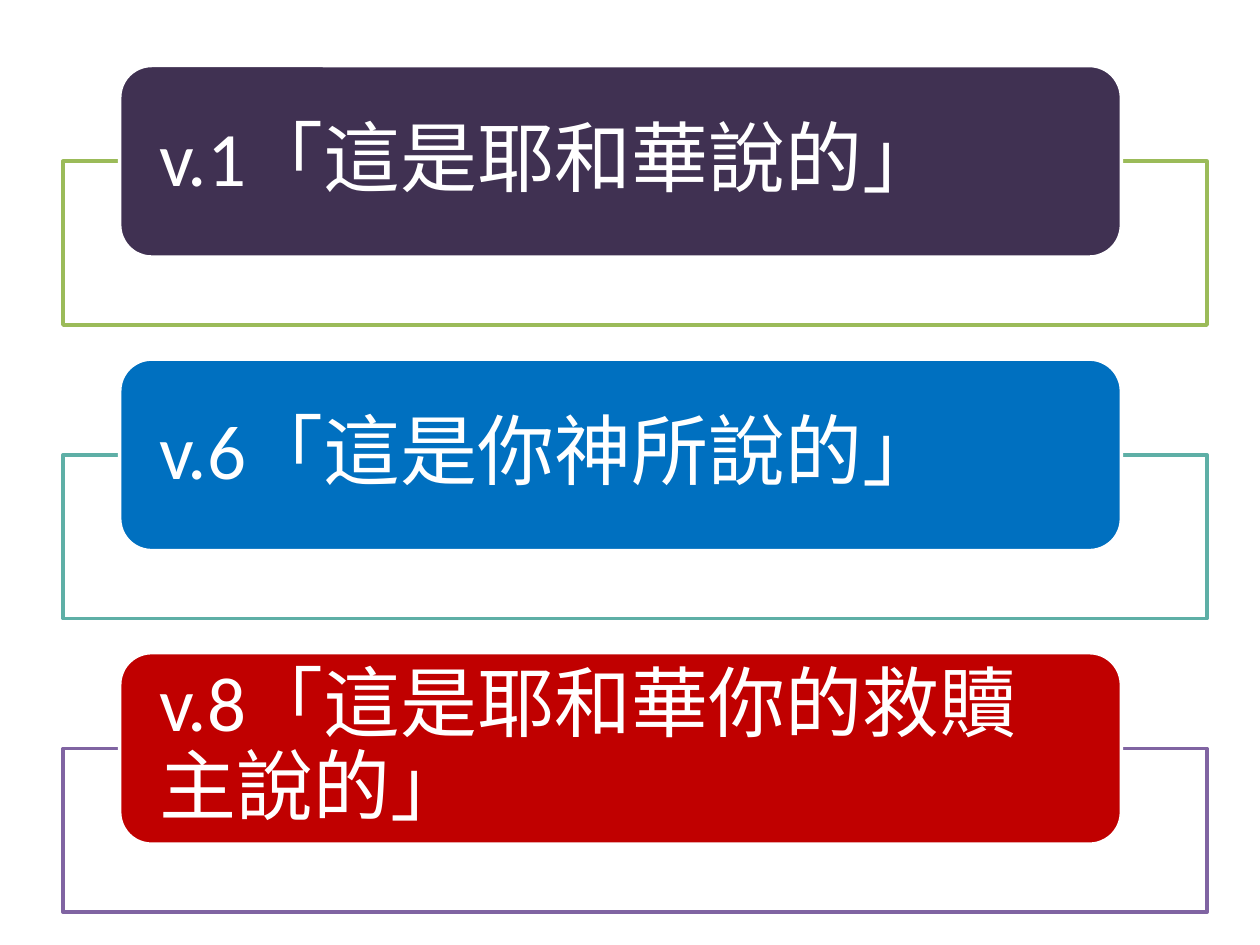
from pptx import Presentation
from pptx.dml.color import RGBColor
from pptx.enum.shapes import MSO_SHAPE
from pptx.enum.text import MSO_ANCHOR, PP_ALIGN
from pptx.util import Inches, Pt

RECTANGLE, ROUNDED = MSO_SHAPE.RECTANGLE, MSO_SHAPE.ROUNDED_RECTANGLE
MIDDLE, LEFT = MSO_ANCHOR.MIDDLE, PP_ALIGN.LEFT

# Content: verse text, label fill, frame line
VERSES = [
    ("v.1「這是耶和華說的」", "403152", "9BBB59"),
    ("v.6「這是你神所說的」", "0070C0", "5EAFA6"),
    ("v.8「這是耶和華你的救贖主說的」", "C00000", "8064A2"),
]
WHITE = "FFFFFF"

# Layout in inches
FIRST_TOP, STEP = 0.52, 2.33
FRAME_LEFT, FRAME_DROP, FRAME_SIZE = 0.5, 0.76, (9.08, 1.3)
LABEL_LEFT, LABEL_SIZE = 0.95, (7.95, 1.52)

FRAME_FORMAT = {
    "word_wrap": True, "vertical_anchor": MIDDLE,
    "margin_left": Inches(0.24), "margin_right": Inches(0.24),
    "margin_top": 0, "margin_bottom": 0,
}
PARAGRAPH_FORMAT = {"alignment": LEFT, "line_spacing": 0.9}
FONT_FORMAT = {"name": "Calibri", "size": Pt(44)}


def color(value):
    return RGBColor.from_string(value)


def set_format(target, values):
    for name, value in values.items():
        setattr(target, name, value)


def add_box(slide, kind, left, top, size, fill, line):
    shape = slide.shapes.add_shape(
        kind, *(Inches(length) for length in (left, top, *size)))
    shape.shadow.inherit = False
    shape.fill.solid()
    shape.fill.fore_color.rgb = color(fill)
    shape.line.color.rgb = color(line)
    shape.line.width = Pt(2)
    return shape


def add_verse(shape, text):
    set_format(shape.text_frame, FRAME_FORMAT)
    paragraph = shape.text_frame.paragraphs[0]
    set_format(paragraph, PARAGRAPH_FORMAT)
    run = paragraph.add_run()
    run.text = text
    set_format(run.font, FONT_FORMAT)
    run.font.color.rgb = color(WHITE)


def main():
    presentation = Presentation()
    presentation.slide_width, presentation.slide_height = Inches(10), Inches(7.5)
    slide = presentation.slides.add_slide(presentation.slide_layouts[6])

    # Each verse label overlaps the top edge of its frame
    for index, (text, fill, line) in enumerate(VERSES):
        top = FIRST_TOP + index * STEP
        add_box(slide, RECTANGLE, FRAME_LEFT, top + FRAME_DROP, FRAME_SIZE, WHITE, line)
        label = add_box(slide, ROUNDED, LABEL_LEFT, top, LABEL_SIZE, fill, WHITE)
        add_verse(label, text)

    presentation.save("out.pptx")


if __name__ == "__main__":
    main()
